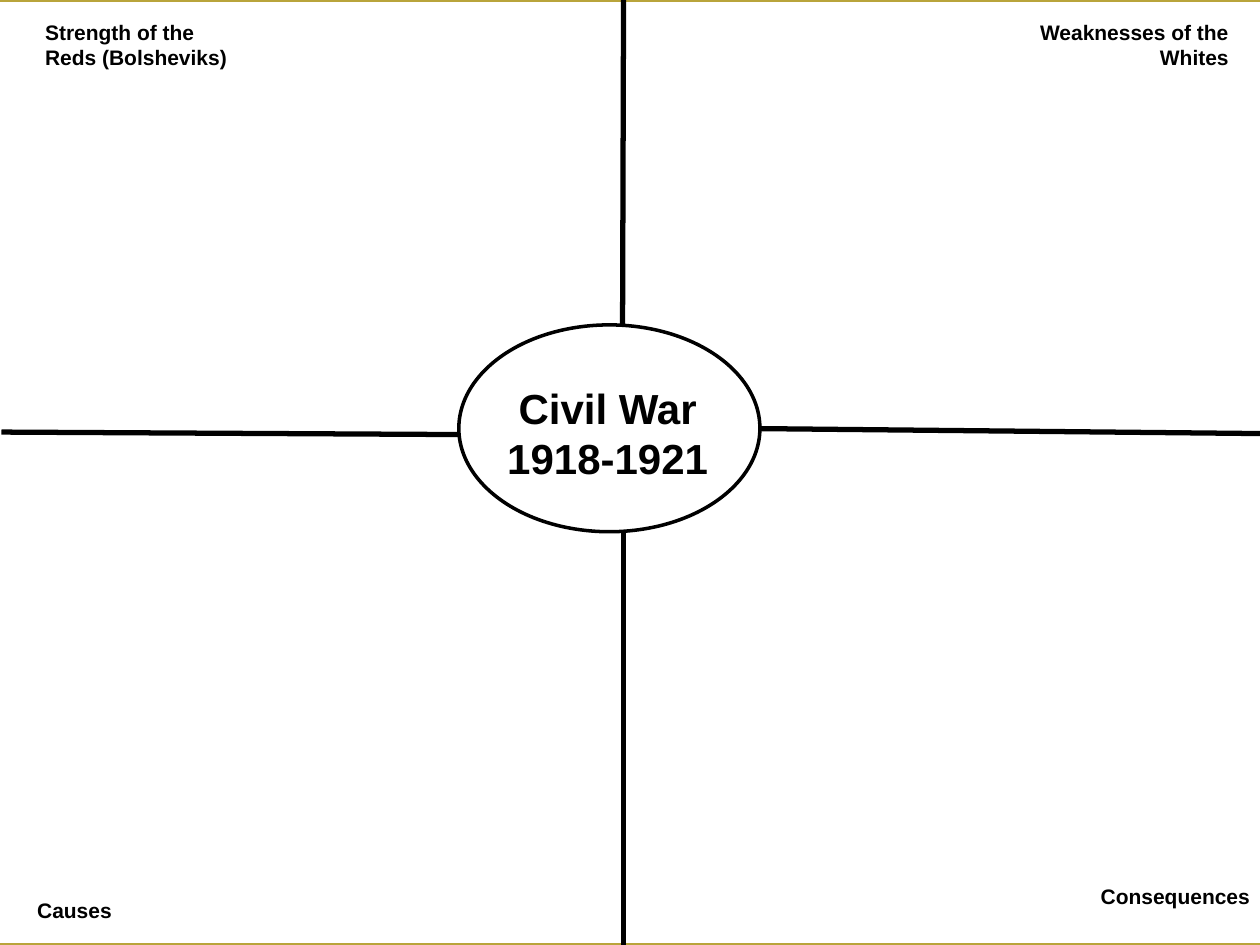
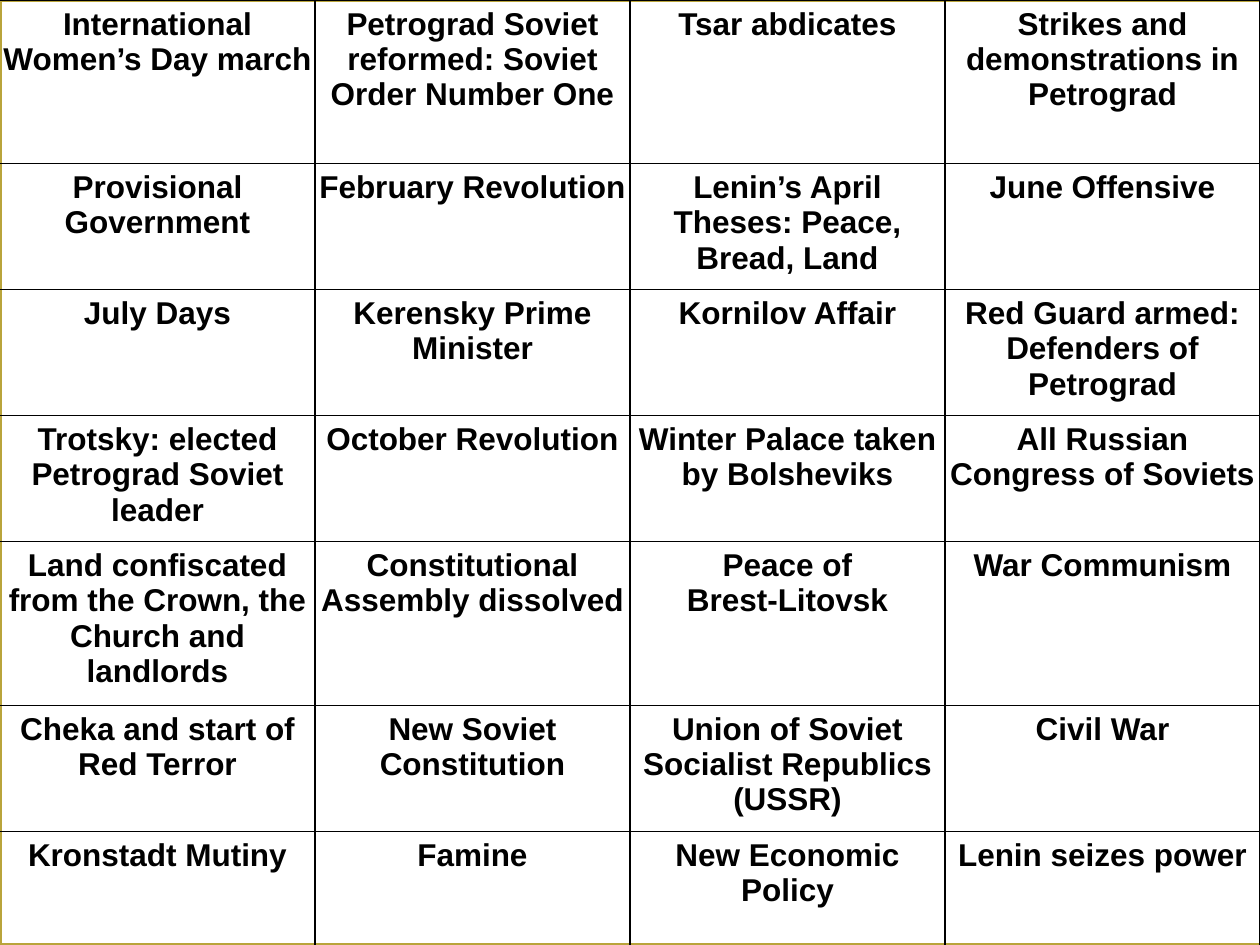
from lxml.etree import SubElement
from pptx import Presentation
from pptx.dml.color import RGBColor
from pptx.enum.shapes import MSO_CONNECTOR, MSO_SHAPE
from pptx.enum.text import MSO_ANCHOR, PP_ALIGN
from pptx.oxml import parse_xml
from pptx.oxml.ns import nsdecls, qn
from pptx.util import Cm, Pt

# Content
TOPIC = "Civil War\n1918-1921"
# text, left, top, height, alignment
CORNERS = [
    ("Strength of the Reds (Bolsheviks)", 0.66, 0.25, 1.3, PP_ALIGN.LEFT),
    ("Causes", 0.5, 17.96, 0.76, PP_ALIGN.LEFT),
    ("Consequences", 20.83, 17.68, 0.76, PP_ALIGN.RIGHT),
    ("Weaknesses of the Whites", 20.4, 0.25, 1.3, PP_ALIGN.RIGHT),
]
# Lines from the slide edge to the oval: x1, y1, x2, y2
SPOKES = [
    (12.57, 0, 12.55, 6.55),
    (12.57, 10.72, 12.57, 19.05),
    (25.4, 8.74, 15.3, 8.64),
    (9.25, 8.76, 0.03, 8.71),
]
EVENTS = [
    ("International Women’s Day march",
     "Petrograd Soviet reformed: Soviet Order Number One",
     "Tsar abdicates", "Strikes and demonstrations in Petrograd"),
    ("Provisional Government", "February Revolution",
     "Lenin’s April Theses: Peace, Bread, Land", "June Offensive"),
    ("July Days", "Kerensky Prime Minister", "Kornilov Affair",
     "Red Guard armed: Defenders of Petrograd"),
    ("Trotsky: elected Petrograd Soviet leader", "October Revolution",
     "Winter Palace taken by Bolsheviks", "All Russian Congress of Soviets"),
    ("Land confiscated from the Crown, the Church and landlords",
     "Constitutional Assembly dissolved", "Peace of\nBrest-Litovsk",
     "War Communism"),
    ("Cheka and start of Red Terror", "New Soviet Constitution",
     "Union of Soviet Socialist Republics (USSR)", "Civil War"),
    ("Kronstadt Mutiny", "Famine", "New Economic Policy",
     "Lenin seizes power"),
]
ROW_HEIGHTS = [3.3, 2.54, 2.54, 2.54, 3.3, 2.54, 2.29]

# Shared style
WIDTH, HEIGHT = 25.4, 19.05
BLACK = RGBColor(0, 0, 0)
WHITE = RGBColor(255, 255, 255)
GOLD = RGBColor(0xB9, 0xA4, 0x3B)
FONT = {"name": "Arial", "bold": True}
CELL = {"margin_left": 0, "margin_right": 0, "margin_top": Cm(0.13),
        "margin_bottom": Cm(0.13), "vertical_anchor": MSO_ANCHOR.TOP}


def set_all(target, values):
    for name, value in values.items():
        setattr(target, name, value)


def write(frame, text, size, align):
    frame.text = text
    for paragraph in frame.paragraphs:
        paragraph.alignment = align
        set_all(paragraph.font, {**FONT, "size": Pt(size)})
        paragraph.font.color.rgb = BLACK


def add_label(slide, text, box, size, align):
    frame = slide.shapes.add_textbox(*map(Cm, box)).text_frame
    set_all(frame, {"word_wrap": True, "vertical_anchor": MSO_ANCHOR.MIDDLE})
    write(frame, text, size, align)


def add_outlined(slide, kind, box, color):
    shape = slide.shapes.add_shape(kind, *map(Cm, box))
    shape.shadow.inherit = False
    shape.fill.solid()
    shape.fill.fore_color.rgb = WHITE
    shape.line.color.rgb = color
    shape.line.width = Pt(2)


def add_spoke(slide, ends):
    spoke = slide.shapes.add_connector(MSO_CONNECTOR.STRAIGHT, *map(Cm, ends))
    spoke.line.color.rgb = BLACK
    spoke.line.width = Pt(3)
    SubElement(spoke._element.spPr, qn("a:effectLst"))


def add_borders(cell, sides):
    properties = cell._tc.get_or_add_tcPr()
    for place, side in enumerate("LRTB"):
        paint = (f'<a:solidFill><a:srgbClr val="{BLACK}"/></a:solidFill>'
                 if side in sides else "<a:noFill/>")
        properties.insert(place, parse_xml(
            f'<a:ln{side} {nsdecls("a")} w="{Pt(1)}">{paint}</a:ln{side}>'))


def add_framed_slide(deck, left):
    slide = deck.slides.add_slide(deck.slide_layouts[6])
    add_outlined(slide, MSO_SHAPE.RECTANGLE, (left, 0, 25.9, HEIGHT), GOLD)
    return slide


def build_mind_map(deck):
    slide = add_framed_slide(deck, -0.4)
    add_outlined(slide, MSO_SHAPE.OVAL, (9.25, 6.55, 6.07, 4.17), BLACK)
    add_label(slide, TOPIC, (6.93, 7.57, 10.64, 2.31), 24, PP_ALIGN.CENTER)
    for ends in SPOKES:
        add_spoke(slide, ends)
    for text, left, top, height, align in CORNERS:
        add_label(slide, text, (left, top, 4.62, height), 12, align)


def build_event_grid(deck):
    slide = add_framed_slide(deck, 0)
    rows, columns = len(EVENTS), len(EVENTS[0])
    grid = slide.shapes.add_table(
        rows, columns, 0, 0, Cm(WIDTH), Cm(HEIGHT)).table
    set_all(grid, {"first_row": False, "horz_banding": False})
    for column in grid.columns:
        column.width = Cm(WIDTH / columns)
    for r, (events, height) in enumerate(zip(EVENTS, ROW_HEIGHTS)):
        grid.rows[r].height = Cm(height)
        for c, event in enumerate(events):
            cell = grid.cell(r, c)
            set_all(cell, CELL)
            write(cell.text_frame, event, 18, PP_ALIGN.CENTER)
            cell.fill.background()
            # The gold frame shows along the left and bottom edges
            add_borders(cell, "RT" + "L" * (c > 0) + "B" * (r < rows - 1))


def main():
    deck = Presentation()
    set_all(deck, {"slide_width": Cm(WIDTH), "slide_height": Cm(HEIGHT)})
    build_mind_map(deck)
    build_event_grid(deck)
    deck.save("out.pptx")


if __name__ == "__main__":
    main()
